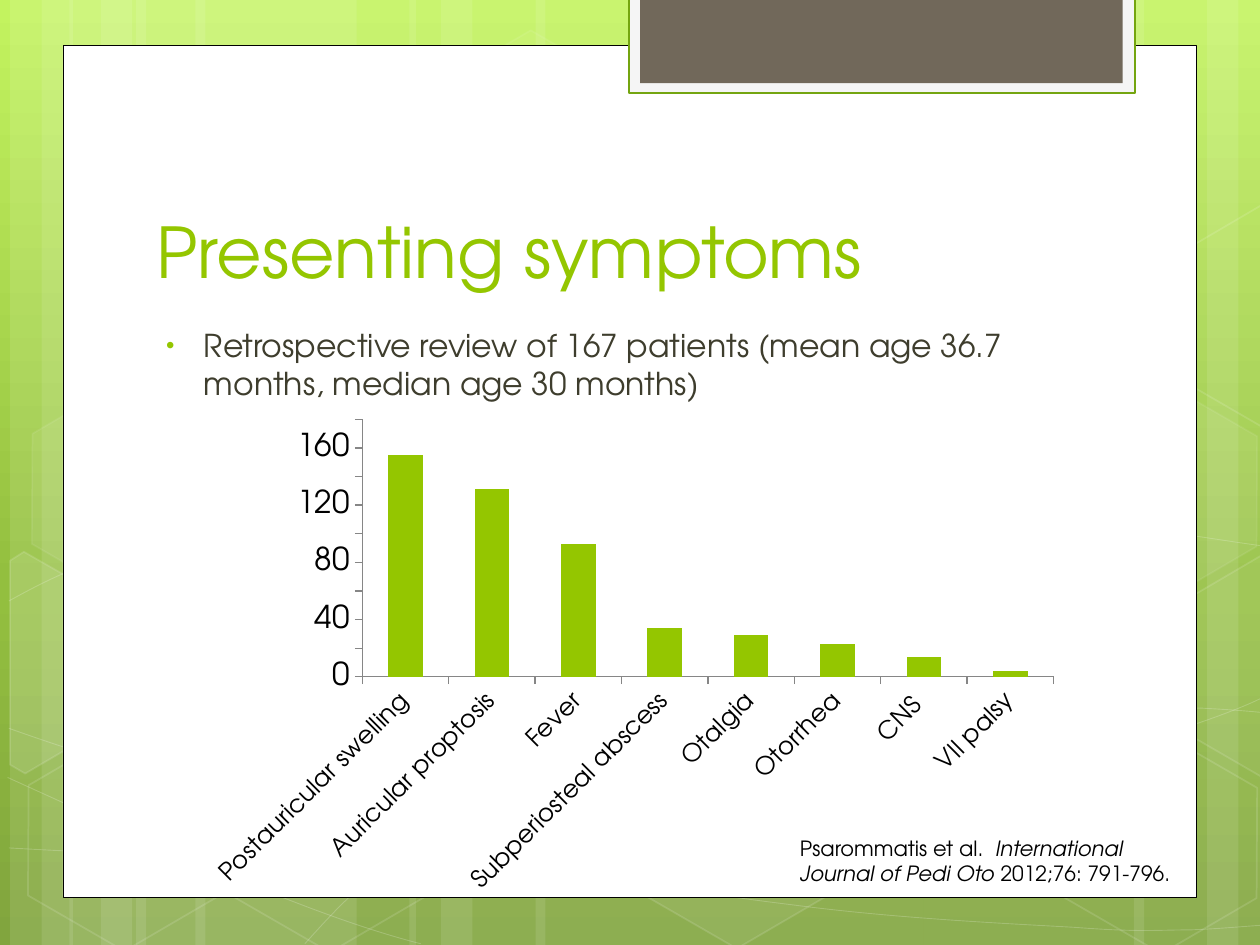
"""Build the presenting symptoms slide with its bar chart."""
import copy
from dataclasses import dataclass

import lxml.etree
import pptx
import pptx.chart.data
import pptx.dml.color
import pptx.enum.chart
import pptx.enum.shapes
import pptx.enum.text
import pptx.oxml.ns
import pptx.util
from pptx.util import Inches


@dataclass(frozen=True)
class Theme:
    font: str = "TeX Gyre Adventor"
    green: str = "94C600"
    outline: str = "74A510"
    body: str = "3E3D2D"
    black: str = "000000"
    white: str = "FFFFFF"
    tab_frame: str = "F5F5F5"
    tab: str = "71685A"
    axis: str = "868686"
    background: tuple = ((0, "C3F35F"), (0.62, "93BF3F"), (1, "81A53E"))
    title_size: int = 40
    body_size: int = 18
    category_size: int = 14
    source_size: int = 12


theme = Theme()
rgb = pptx.dml.color.RGBColor.from_string
qn = pptx.oxml.ns.qn


def paint(shape, fill=None, fill_alpha=100, line=None, width=1, line_alpha=100):
    shape.shadow.inherit = False
    for target, color, alpha in ((shape.fill, fill, fill_alpha), (shape.line.fill, line, line_alpha)):
        if color is None or alpha == 0:
            target.background()
            continue
        target.solid()
        target.fore_color.rgb = rgb(color)
        if alpha < 100:
            parent = shape.line._get_or_add_ln() if target is not shape.fill else shape.element.spPr
            value = parent.find(qn("a:solidFill")).find(qn("a:srgbClr"))
            lxml.etree.SubElement(value, qn("a:alpha"), val=str(alpha * 1000))
    if line:
        shape.line.width = pptx.util.Pt(width)


def add_runs(paragraph, runs, size, color):
    paragraph.alignment = pptx.enum.text.PP_ALIGN.LEFT
    for text, italic in runs:
        run = paragraph.add_run()
        run.text = text
        run.font.name = theme.font
        run.font.size = pptx.util.Pt(size)
        run.font.color.rgb = rgb(color)
        run.font.italic = italic


presentation = pptx.Presentation()
presentation.slide_width = Inches(10)
presentation.slide_height = Inches(7.5)
slide = presentation.slides.add_slide(presentation.slide_layouts[5])
shapes = slide.shapes
preset = pptx.enum.shapes.MSO_SHAPE

background = slide.background.fill
background.gradient()
background.gradient_angle = 270
stop_list = slide.element.find(".//" + qn("a:gsLst"))
stop_list.append(copy.deepcopy(stop_list[0]))
for stop, (position, color) in zip(background.gradient_stops, theme.background):
    stop.position = position
    stop.color.rgb = rgb(color)

stripes = [
    (1.08, 1.75), (0.08, 0.5), (0.33, 0.83), (1.55, 1.75), (0.55, 0.5), (0.8, 0.83),
    (7.33, 1.75), (9.58, 0.5), (9, 0.83), (4.25, 3.08), (3.25, 0.5), (3.5, 0.83),
]
for left, width in stripes:
    stripe = shapes.add_shape(preset.RECTANGLE, Inches(left), 0, Inches(width), Inches(7.5))
    paint(stripe, theme.white, 10)

curves = [
    [(0.07, 6.73), (0.61, 6.76), (1.15, 6.79), (1.9, 6.78), (2.65, 6.77), (3.58, 6.75), (4.58, 6.65),
     (5.58, 6.55), (7, 6.36), (7.92, 6.17), (8.83, 5.98), (9.77, 5.68), (10.07, 5.51)],
    [(0.07, 4.77), (0.36, 4.61), (0.65, 4.46), (1.21, 4.31), (1.78, 4.16), (2.59, 3.94), (3.47, 3.87),
     (4.36, 3.8), (5.44, 3.79), (6.54, 3.87), (7.64, 3.95), (9.47, 4.26), (10.07, 4.34)],
    [(0.06, 6.17), (1.27, 6.72), (2.47, 7.27), (3.34, 7.49)],
    [(0.07, 5.78), (0.38, 5.89), (0.7, 6), (1.28, 6.16), (1.86, 6.31), (2.73, 6.56), (3.57, 6.73),
     (4.4, 6.9), (5.45, 7.08), (6.28, 7.18), (7.11, 7.29), (8, 7.33), (8.53, 7.36),
     (9.05, 7.4), (9.19, 7.38), (9.45, 7.38), (9.71, 7.37), (9.89, 7.35), (10.07, 7.34)],
    [(2.42, 7.49), (2.6, 7.29), (2.78, 7.09), (3.02, 6.91), (3.26, 6.73), (3.6, 6.53), (3.88, 6.39),
     (4.16, 6.25), (4.33, 6.19), (4.7, 6.09), (5.06, 5.99), (5.73, 5.85), (6.08, 5.78),
     (6.44, 5.71), (6.49, 5.71), (6.8, 5.69), (7.11, 5.66), (7.6, 5.63), (7.94, 5.62),
     (8.29, 5.61), (8.86, 5.62), (8.86, 5.62), (9.08, 5.62), (9.3, 5.62), (9.53, 5.62),
     (9.71, 5.63), (9.88, 5.64), (10.06, 5.66)],
]
for knots in curves:
    start, *points = [(Inches(x), Inches(y)) for x, y in knots]
    builder = shapes.build_freeform(*start)
    builder.add_line_segments(points, close=False)
    curve = builder.convert_to_shape()
    outline = curve.element.find(".//" + qn("a:path"))
    segments = outline.findall(qn("a:lnTo"))
    for first in range(0, len(segments), 3):
        bezier = lxml.etree.SubElement(outline, qn("a:cubicBezTo"))
        for segment in segments[first:first + 3]:
            bezier.append(segment[0])
            outline.remove(segment)
    paint(curve, line=theme.white, width=0.5, line_alpha=20)

hexagons = [
    (3.34, 0.36, 4, 8), (4.97, 5.89, 6, 12), (0.11, 5.91, 0, 12), (0.14, 3.12, 7, 8),
    (1.74, 5.92, 0, 12), (7.53, 4.53, 10, 12), (8.34, 5.93, 0, 12), (8.34, 3.14, 7, 8),
]
for left, top, fill_alpha, line_alpha in hexagons:
    hexagon = shapes.add_shape(preset.HEXAGON, Inches(left), Inches(top), Inches(1.75), Inches(1.52))
    hexagon.rotation = 30
    hexagon.adjustments[0] = 0.285
    paint(hexagon, theme.white, fill_alpha, theme.white, 1, line_alpha)

cut_hexagons = [
    ([(0.08, 4.45), (0.19, 4.38), (0.96, 4.82), (0.95, 5.7), (0.2, 6.14), (0.08, 6.07)], 10),
    ([(9.26, 4.85), (10.01, 4.41), (10.09, 4.46), (10.09, 6.13), (10.02, 6.17), (9.26, 5.73)], 4),
    ([(9.26, 2.07), (10.01, 1.63), (10.1, 1.68), (10.09, 3.35), (10.02, 3.39), (9.26, 2.95)], 0),
]
for corners, fill_alpha in cut_hexagons:
    start, *points = [(Inches(x), Inches(y)) for x, y in corners]
    builder = shapes.build_freeform(*start)
    builder.add_line_segments(points, close=True)
    paint(builder.convert_to_shape(), theme.white, fill_alpha, theme.white, 1, 12)

panels = [
    (0.5, 0.36, 9, 6.76, theme.white, theme.black, 0.5),
    (4.99, -0.02, 4.02, 0.76, theme.tab_frame, theme.outline, 1.25),
    (5.08, -0.02, 3.83, 0.68, theme.tab, None, 0),
]
for left, top, width, height, fill, line, line_width in panels:
    panel = shapes.add_shape(preset.RECTANGLE, Inches(left), Inches(top), Inches(width), Inches(height))
    paint(panel, fill, line=line, width=line_width)

title = shapes.title
title.left, title.top, title.width, title.height = Inches(1.14), Inches(1.12), Inches(7.68), Inches(1.25)
title.text_frame.vertical_anchor = pptx.enum.text.MSO_ANCHOR.BOTTOM
add_runs(title.text_frame.paragraphs[0], [("Presenting symptoms", False)], theme.title_size, theme.green)
title.element.getparent().append(title.element)

review = shapes.add_textbox(Inches(1.14), Inches(2.54), Inches(7.41), Inches(3.84))
review.text_frame.word_wrap = True
paragraph = review.text_frame.paragraphs[0]
add_runs(paragraph, [("Retrospective review of 167 patients (mean age 36.7 months, median age 30 months)", False)],
         theme.body_size, theme.body)
paragraph.space_before = pptx.util.Pt(3.6)
properties = paragraph._p.get_or_add_pPr()
properties.set("marL", str(Inches(0.38)))
properties.set("indent", str(Inches(-0.3)))
bullet_color = lxml.etree.SubElement(properties, qn("a:buClr"))
lxml.etree.SubElement(bullet_color, qn("a:srgbClr"), val=theme.green)
lxml.etree.SubElement(properties, qn("a:buSzPct"), val="76000")
lxml.etree.SubElement(properties, qn("a:buFont"), typeface="Arial")
lxml.etree.SubElement(properties, qn("a:buChar"), char="•")

symptoms = {
    "Postauricular swelling": 155, "Auricular proptosis": 131, "Fever": 93, "Subperiosteal abscess": 34,
    "Otalgia": 29, "Otorrhea": 23, "CNS ": 14, "VII palsy": 4,
}
chart_data = pptx.chart.data.CategoryChartData()
chart_data.categories = list(symptoms)
chart_data.add_series("Series 1", list(symptoms.values()))
chart = shapes.add_chart(pptx.enum.chart.XL_CHART_TYPE.COLUMN_CLUSTERED, Inches(1.58), Inches(3.25),
                         Inches(6.92), Inches(3.92), chart_data).chart
chart.has_legend = False
chart.has_title = False
chart.font.name = theme.font
chart.font.size = pptx.util.Pt(theme.body_size)
chart.font.color.rgb = rgb(theme.black)
plot = chart.plots[0]
plot.gap_width = 150
plot.vary_by_categories = False
plot.series[0].format.fill.solid()
plot.series[0].format.fill.fore_color.rgb = rgb(theme.green)
for axis, size in ((chart.category_axis, theme.category_size), (chart.value_axis, theme.body_size)):
    axis.has_major_gridlines = False
    axis.major_tick_mark = pptx.enum.chart.XL_TICK_MARK.OUTSIDE
    axis.format.line.color.rgb = rgb(theme.axis)
    axis.tick_labels.font.size = pptx.util.Pt(size)
    axis.tick_labels.font.name = theme.font
    axis.tick_labels.font.color.rgb = rgb(theme.black)
chart.value_axis.minimum_scale = 0
chart.value_axis.maximum_scale = 180
chart.value_axis.major_unit = 20
chart.category_axis._element.find(qn("c:txPr")).find(qn("a:bodyPr")).set("rot", "-2700000")

source = shapes.add_textbox(Inches(6.25), Inches(6.58), Inches(3.25), Inches(0.5))
source.text_frame.word_wrap = True
add_runs(source.text_frame.paragraphs[0], [("Psarommatis et al.  ", False), ("International", True)],
         theme.source_size, theme.black)
add_runs(source.text_frame.add_paragraph(), [("Journal of Pedi Oto ", True), ("2012;76: 791-796.", False)],
         theme.source_size, theme.black)

presentation.save("out.pptx")
